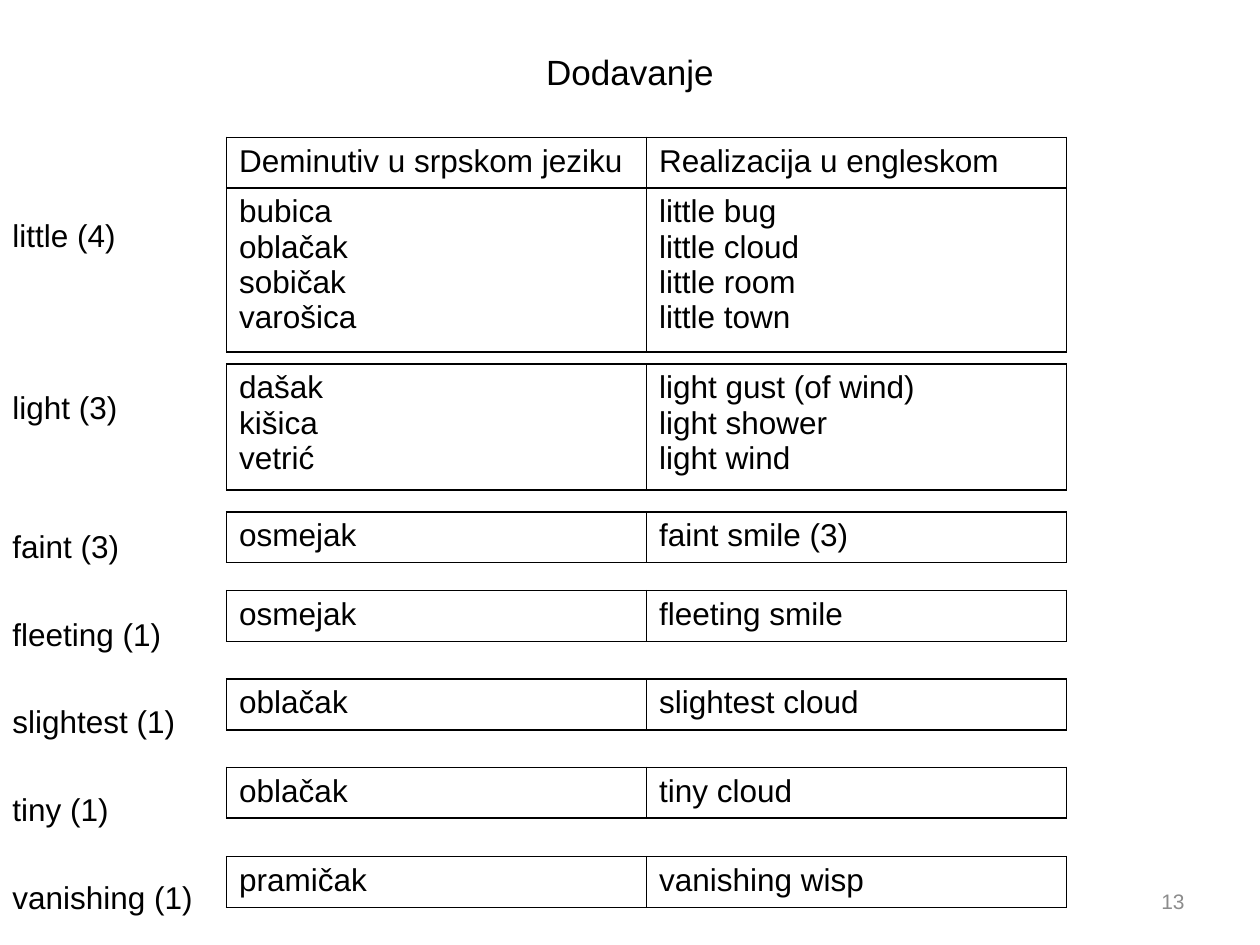
from lxml.etree import SubElement
from pptx import Presentation
from pptx.dml.color import RGBColor
from pptx.enum.text import MSO_ANCHOR as ANCHOR, PP_ALIGN as ALIGN
from pptx.oxml.ns import qn
from pptx.util import Pt

BLACK = "000000"
GRAY = "8C8C8C"
COL_W = 240
TABLE_X = 129.5


def rgb(color):
    return RGBColor.from_string(color)


def add_run(p, text, size=18, color=BLACK):
    r = p.add_run()
    r.text = text
    r.font.name = "Arial"
    r.font.size = Pt(size)
    r.font.color.rgb = rgb(color)


prs = Presentation()
prs.slide_width, prs.slide_height = Pt(720), Pt(540)
s = prs.slides.add_slide(prs.slide_layouts[5])

title = s.shapes.title
title.left, title.top, title.width, title.height = Pt(0), Pt(26), Pt(720), Pt(30)
tf = title.text_frame
tf.vertical_anchor = ANCHOR.MIDDLE
p = tf.paragraphs[0]
p.alignment = ALIGN.CENTER
add_run(p, "Dodavanje", 20)

labels = [
    ("little (4)", 0),
    ("light (3)", 76.5),
    ("faint (3)", 58),
    ("fleeting (1)", 28.5),
    ("slightest (1)", 28.5),
    ("tiny (1)", 28.5),
    ("vanishing (1)", 28.5),
]
tf = s.shapes.add_textbox(Pt(0), Pt(120), Pt(TABLE_X), Pt(406)).text_frame
tf.word_wrap = True
for i, (label, gap) in enumerate(labels):
    p = tf.add_paragraph() if i else tf.paragraphs[0]
    p.space_before = Pt(gap)
    add_run(p, label)

tables = [
    (78.5, [
        (29, ["Deminutiv u srpskom jeziku"], ["Realizacija u engleskom"]),
        (93.5, ["bubica", "oblačak", "sobičak", "varošica"],
         ["little bug", "little cloud", "little room", "little town"]),
    ]),
    (208, [(72, ["dašak", "kišica", "vetrić"],
            ["light gust (of wind)", "light shower", "light wind"])]),
    (292.5, [(29, ["osmejak"], ["faint smile (3)"])]),
    (337.5, [(29, ["osmejak"], ["fleeting smile"])]),
    (388, [(29, ["oblačak"], ["slightest cloud"])]),
    (438.5, [(29, ["oblačak"], ["tiny cloud"])]),
    (489.5, [(29, ["pramičak"], ["vanishing wisp"])]),
]
for top, rows in tables:
    height = sum(row[0] for row in rows)
    table = s.shapes.add_table(len(rows), 2, Pt(TABLE_X), Pt(top),
                               Pt(2 * COL_W), Pt(height)).table
    table.first_row = table.horz_banding = False
    for i, (row_h, *cells) in enumerate(rows):
        table.rows[i].height = Pt(row_h)
        for j, lines in enumerate(cells):
            cell = table.cell(i, j)
            tcPr = cell._tc.get_or_add_tcPr()
            for side in ("lnL", "lnR", "lnT", "lnB"):
                ln = SubElement(tcPr, qn(f"a:{side}"), w=str(Pt(1)))
                SubElement(SubElement(ln, qn("a:solidFill")), qn("a:srgbClr"), val=BLACK)
            cell.fill.background()
            tf = cell.text_frame
            for k, line in enumerate(lines):
                p = tf.add_paragraph() if k else tf.paragraphs[0]
                add_run(p, line)

tf = s.shapes.add_textbox(Pt(516), Pt(500.5), Pt(168), Pt(29)).text_frame
tf.word_wrap = True
tf.vertical_anchor = ANCHOR.MIDDLE
p = tf.paragraphs[0]
p.alignment = ALIGN.RIGHT
add_run(p, "13", 12, GRAY)

prs.save("out.pptx")
